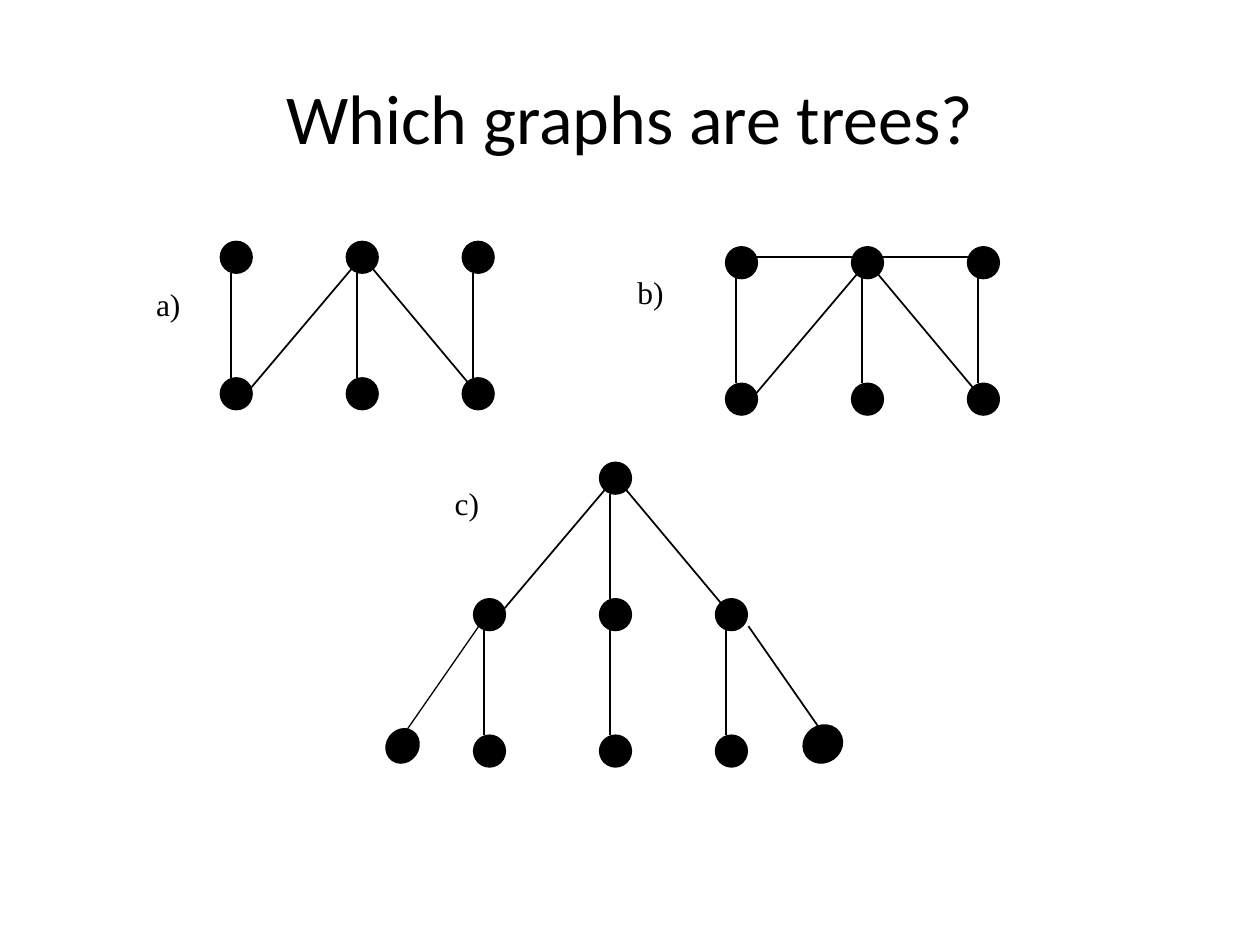
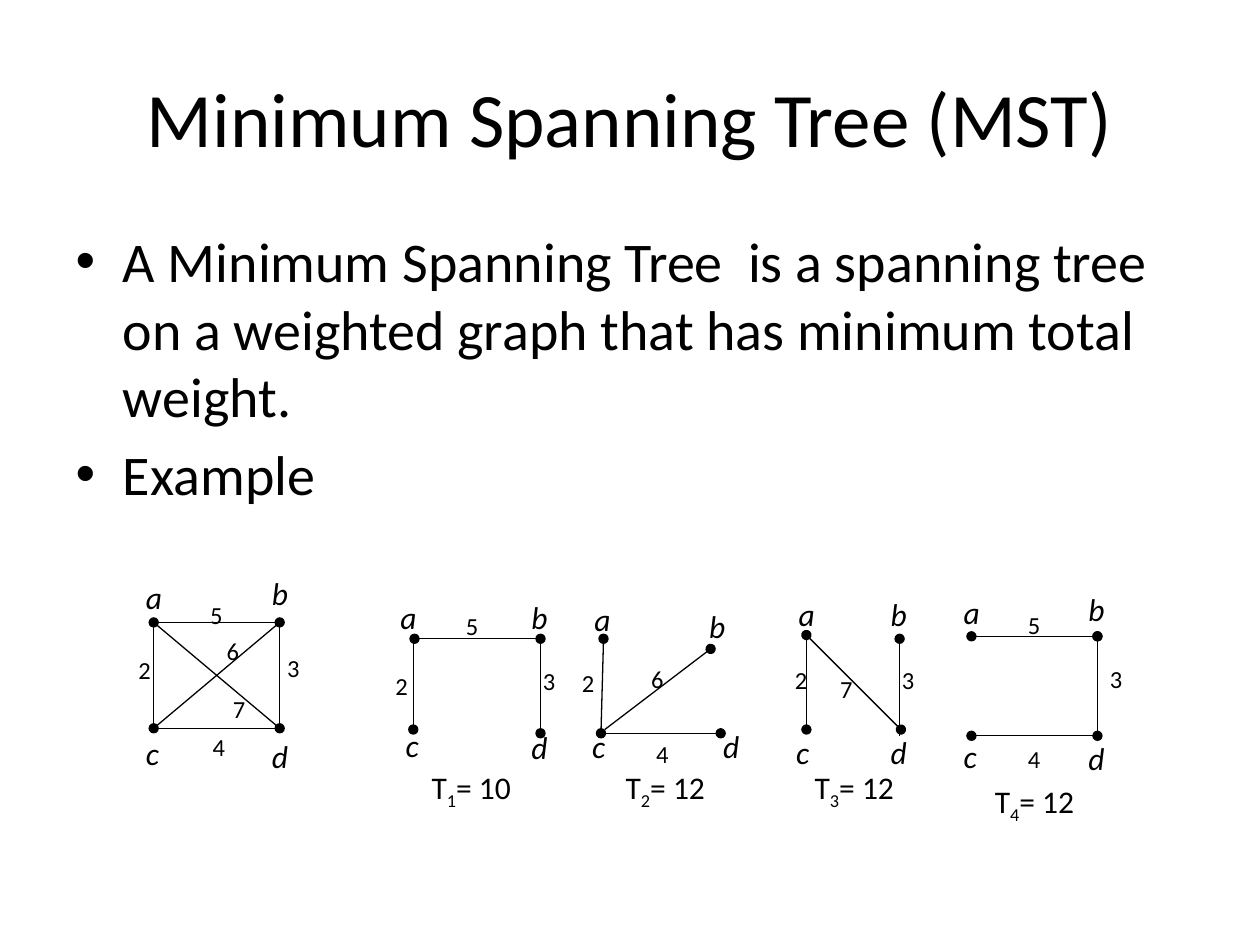
from dataclasses import dataclass

from lxml.etree import SubElement
from pptx import Presentation
from pptx.dml.color import RGBColor
from pptx.enum.shapes import MSO_CONNECTOR, MSO_SHAPE
from pptx.enum.text import MSO_ANCHOR, MSO_AUTO_SIZE, PP_ALIGN
from pptx.oxml.ns import qn
from pptx.util import Inches, Pt

COLUMNS, ROWS = 100, 75
CELL = Inches(0.1)
BLACK = RGBColor(0, 0, 0)

TITLE_BOX = (5, 3, 90, 12.5)
BODY_BOX = (5, 17.5, 90, 49.5)

BASE = {"name": "Calibri"}
BODY = BASE | {"size": Pt(32)}
VERTEX = BASE | {"size": Pt(18), "italic": True}
WEIGHT = BASE | {"size": Pt(14)}
TOTAL = BASE | {"size": Pt(18)}
LETTER = {"name": "Times New Roman", "size": Pt(18)}

# Nodes of a question graph stand on three columns and a fixed row pitch.
NODE = 2.5
NODE_COLUMNS = (0, 10, 19.2)
NODE_PITCH = 10.83
STEM_INSET = 0.83
SLANT_INSET = 1.67

VERTEX_WIDTHS = {"a": 3.3, "b": 3.4, "c": 3.1, "d": 3.4}
VERTEX_HEIGHT = 4
WEIGHT_SIZE = (3, 3.4)
TOTAL_SIZE = (9.2, 4)


@dataclass(frozen=True)
class Edge:
    """A line; ends holds "h" and "t" where its head and tail carry a dot."""
    x1: float
    y1: float
    x2: float
    y2: float
    ends: str = ""
    width: float = 0.75


@dataclass(frozen=True)
class Leaf:
    box: tuple
    rotation: float


@dataclass(frozen=True)
class Question:
    """Node positions are (column, row); slants run from the middle top node."""
    letter: str
    letter_box: tuple
    origin: tuple
    nodes: tuple
    stems: tuple
    edges: tuple = ()
    leaves: tuple = ()


@dataclass(frozen=True)
class WeightedGraph:
    edges: tuple
    vertices: tuple
    weights: dict
    total: str = ""
    total_at: tuple = ()


TWO_ROWS = tuple((c, r) for r in range(2) for c in range(3))
TOP_STEMS = tuple((c, 0) for c in range(3))
LOWER_ROWS = tuple((c, r) for r in (1, 2) for c in range(3))

QUESTIONS = (
    Question("a)", (11.4, 22.1, 4, 4), (17.5, 19.17), TWO_ROWS, TOP_STEMS),
    Question("b)", (49.6, 21.2, 4.1, 4), (57.6, 19.6), TWO_ROWS, TOP_STEMS,
             edges=(Edge(59.3, 20.4, 77.6, 20.4, width=1),)),
    Question("c)", (35.1, 37.9, 4, 4), (37.6, 36.7),
             ((1, 0),) + LOWER_ROWS, ((1, 0), (0, 1), (1, 1), (2, 1)),
             edges=(Edge(59.4, 49.7, 64.9, 57.6, width=1),
                    Edge(38, 49.7, 31.2, 59.5)),
             leaves=(Leaf((30.7, 57.8, 2.5, 2.8), 35.2),
                     Leaf((63.7, 57.6, 3.2, 2.9), 324.8))),
)

WEIGHTED_GRAPHS = (
    WeightedGraph(
        (Edge(12.2, 49.4, 22.2, 49.4, "ht"), Edge(12.2, 57.8, 22.2, 57.8, "ht"),
         Edge(12.2, 49.4, 12.2, 57.8), Edge(22.2, 49.4, 22.2, 57.8),
         Edge(12.2, 49.4, 22.2, 57.8), Edge(22.2, 49.4, 12.2, 57.8)),
        ((10.6, 45.4), (20.6, 45.1), (10.6, 57.8), (20.6, 58)),
        {"5": (15.7, 47.1), "7": (17.5, 54.6), "3": (21.8, 51.3),
         "2": (10, 51.5), "4": (15.9, 57.6), "6": (17, 50)}),
    WeightedGraph(
        (Edge(32.9, 50.7, 42.9, 50.7, "ht"), Edge(32.8, 50.4, 32.8, 57.9, "t"),
         Edge(42.9, 50.7, 42.9, 58.2, "t")),
        ((30.8, 47), (41.2, 47), (31.2, 57.1), (41.2, 57.3)),
        {"5": (36, 48), "2": (30.4, 52.8), "3": (42.1, 52.4)},
        "10", (32.8, 60.5)),
    WeightedGraph(
        (Edge(47.9, 50.7, 47.7, 58.2, "ht"), Edge(48, 58.2, 57.2, 58.2, "t"),
         Edge(48, 57.9, 56.4, 51.5, "t")),
        ((46.2, 47.1), (55.3, 47.7), (46, 57.2), (56.4, 57.2)),
        {"2": (45.2, 52.5), "6": (50.7, 52.2), "4": (51.1, 58.2)},
        "12", (48.2, 60.5)),
    WeightedGraph(
        (Edge(64, 50.4, 64, 57.9, "t"), Edge(64, 50.4, 71.5, 57.9, "ht"),
         Edge(71.4, 50.7, 71.4, 58.4, "h")),
        ((62.4, 46.7), (69.7, 46.7), (62.2, 57.7), (69.7, 57.7)),
        {"2": (62.1, 52.3), "3": (70.6, 52.3), "7": (65.7, 53)},
        "12", (63.2, 60.5)),
    WeightedGraph(
        (Edge(87.1, 50.5, 87.1, 58.3, "h"), Edge(77.1, 50.5, 87.1, 50.5, "ht"),
         Edge(77.1, 58.4, 87.1, 58.4, "ht")),
        ((75.5, 46.6), (85.4, 46.3), (75.5, 58), (85.4, 58.2)),
        {"5": (80.6, 47.9), "3": (87.1, 52.2), "4": (80.6, 58.6)},
        "12", (77.5, 61.6)),
)


def grid(*cells: float) -> list:
    """Convert grid cells to slide lengths."""
    return [int(n * CELL) for n in cells]


def set_font(font, fmt: dict) -> None:
    for name, value in fmt.items():
        setattr(font, name, value)
    font.color.rgb = BLACK


def place(sp, box: tuple) -> None:
    for name, value in zip(("left", "top", "width", "height"), grid(*box)):
        setattr(sp, name, value)


def add_title(s, text: str, size: float) -> None:
    sp = s.shapes.title
    place(sp, TITLE_BOX)
    tf = sp.text_frame
    tf.text = text
    tf.vertical_anchor = MSO_ANCHOR.MIDDLE
    p = tf.paragraphs[0]
    p.alignment = PP_ALIGN.CENTER
    set_font(p.runs[0].font, BASE | {"size": Pt(size)})


def add_bullets(s, items: tuple) -> None:
    sp = s.placeholders[1]
    place(sp, BODY_BOX)
    tf = sp.text_frame
    tf.text = "\n".join(items)
    for i, p in enumerate(tf.paragraphs):
        p.space_before = Pt(6.4 if i else 0)
        set_font(p.runs[0].font, BODY)


def add_text(shapes, box: tuple, runs: tuple, fmt: dict, wrap: bool = False):
    tf = shapes.add_textbox(*grid(*box)).text_frame
    tf.word_wrap = wrap
    tf.auto_size = MSO_AUTO_SIZE.SHAPE_TO_FIT_TEXT
    p = tf.paragraphs[0]
    for text in runs:
        r = p.add_run()
        r.text = text
        set_font(r.font, fmt)
    return p


def add_edge(shapes, edge: Edge) -> None:
    sp = shapes.add_connector(MSO_CONNECTOR.STRAIGHT,
                              *grid(edge.x1, edge.y1, edge.x2, edge.y2))
    sp.line.color.rgb = BLACK
    sp.line.width = Pt(edge.width)
    ln = sp.line._get_or_add_ln()
    for end, tag in (("h", "a:headEnd"), ("t", "a:tailEnd")):
        if end in edge.ends:
            SubElement(ln, qn(tag), type="oval")
    SubElement(sp._element.spPr, qn("a:effectLst"))


def add_node(shapes, box: tuple, rotation: float = 0) -> None:
    sp = shapes.add_shape(MSO_SHAPE.OVAL, *grid(*box))
    sp.rotation = rotation
    sp.shadow.inherit = False
    sp.fill.solid()
    sp.fill.fore_color.rgb = BLACK
    sp.line.color.rgb = BLACK
    sp.line.width = Pt(1)


def draw_question(s, q: Question) -> None:
    shapes = s.shapes.add_group_shape().shapes
    left, top = q.origin
    xs = [left + column for column in NODE_COLUMNS]
    ys = [top + row * NODE_PITCH for row in range(3)]
    for c, r in q.nodes:
        add_node(shapes, (xs[c], ys[r], NODE, NODE))
    for leaf in q.leaves:
        add_node(shapes, leaf.box, leaf.rotation)
    stems = tuple(Edge(xs[c] + STEM_INSET, ys[r] + NODE,
                       xs[c] + STEM_INSET, ys[r + 1], width=1)
                  for c, r in q.stems)
    slant_top = top + SLANT_INSET
    slants = (Edge(xs[1] + SLANT_INSET, slant_top,
                   xs[2] + STEM_INSET, ys[1] + STEM_INSET, width=1),
              Edge(xs[1] + STEM_INSET, slant_top,
                   xs[0] + SLANT_INSET, ys[1] + SLANT_INSET, width=1))
    for edge in stems + slants + q.edges:
        add_edge(shapes, edge)
    add_text(s.shapes, q.letter_box, (q.letter,), LETTER)


def draw_weighted_graph(s, graph: WeightedGraph, number: int) -> None:
    shapes = s.shapes.add_group_shape().shapes
    for edge in graph.edges:
        add_edge(shapes, edge)
    for (name, width), at in zip(VERTEX_WIDTHS.items(), graph.vertices):
        add_text(shapes, (*at, width, VERTEX_HEIGHT), (name,), VERTEX)
    for weight, at in graph.weights.items():
        add_text(shapes, (*at, *WEIGHT_SIZE), (weight,), WEIGHT)
    if graph.total:
        p = add_text(shapes, (*graph.total_at, *TOTAL_SIZE),
                     ("T", str(number), f"= {graph.total}"), TOTAL, wrap=True)
        p.alignment = PP_ALIGN.CENTER
        p.runs[1]._r.get_or_add_rPr().set("baseline", "-25000")


def main() -> None:
    prs = Presentation()
    prs.slide_width, prs.slide_height = grid(COLUMNS, ROWS)

    s = prs.slides.add_slide(prs.slide_layouts.get_by_name("Title Only"))
    add_title(s, "Which graphs are trees?", 40)
    for question in QUESTIONS:
        draw_question(s, question)

    s = prs.slides.add_slide(prs.slide_layouts.get_by_name("Title and Content"))
    add_title(s, "Minimum Spanning Tree (MST)", 44)
    add_bullets(s, ("A Minimum Spanning Tree  is a spanning tree on a weighted "
                    "graph that has minimum total weight.", "Example"))
    for number, graph in enumerate(WEIGHTED_GRAPHS):
        draw_weighted_graph(s, graph, number)

    prs.save("out.pptx")


if __name__ == "__main__":
    main()
